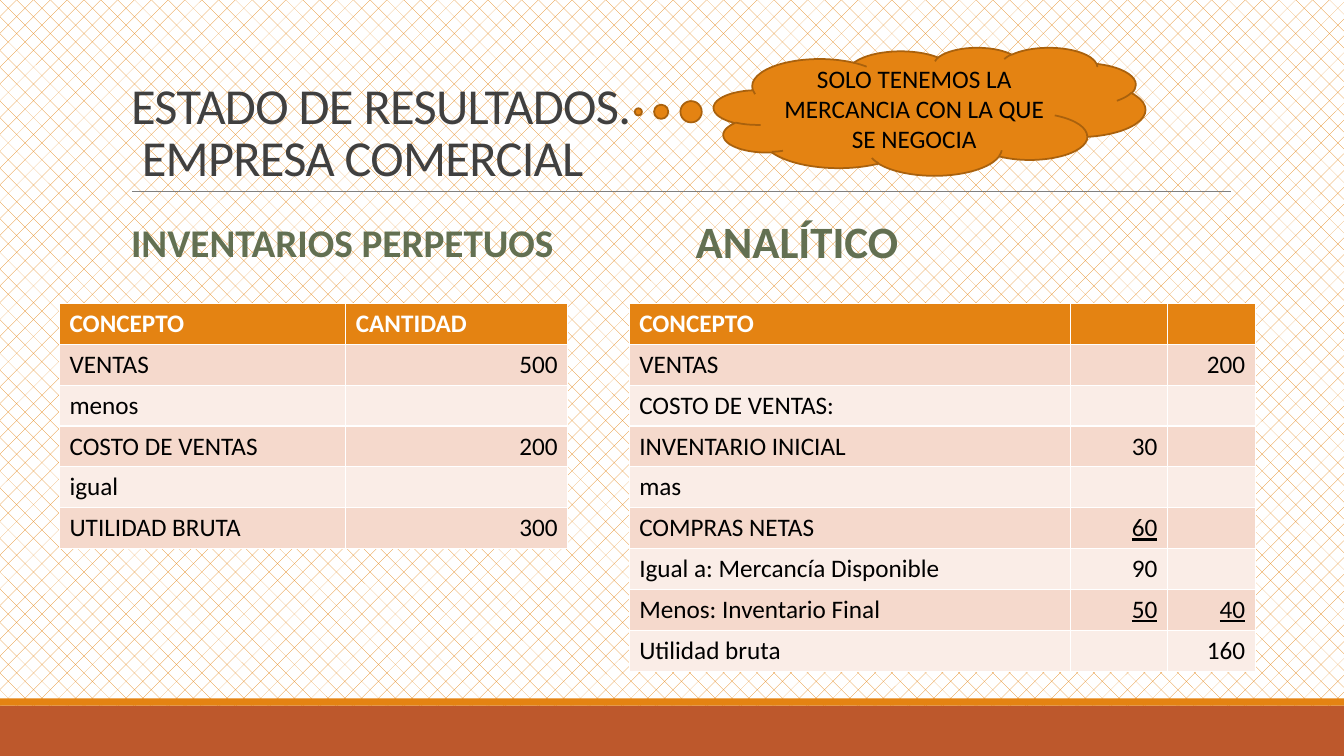
import pptx
import pptx.dml.color
import pptx.enum.dml
import pptx.enum.shapes
import pptx.enum.text
import pptx.oxml
import pptx.oxml.ns
import pptx.util
from pptx.util import Inches

SHAPES = pptx.enum.shapes.MSO_SHAPE
ALIGN = pptx.enum.text.PP_ALIGN
ANCHOR = pptx.enum.text.MSO_ANCHOR

ORANGE, RUST, WHITE, BLACK = "E48312", "BD582C", "FFFFFF", "000000"
BANDS = ("F5D9CC", "FAEDE7")
ROW_HEIGHT = 0.405

PERPETUAL = [
    ("CONCEPTO", "CANTIDAD"),
    ("VENTAS", "500"),
    ("menos", ""),
    ("COSTO DE VENTAS", "200"),
    ("igual", ""),
    ("UTILIDAD BRUTA", "300"),
]
ANALYTIC = [
    ("CONCEPTO", "", ""),
    ("VENTAS", "", "200"),
    ("COSTO DE VENTAS:", "", ""),
    ("INVENTARIO INICIAL", "30", ""),
    ("mas", "", ""),
    ("COMPRAS NETAS", "60", ""),
    ("Igual a: Mercancía Disponible", "90", ""),
    ("Menos: Inventario Final", "50", "40"),
    ("Utilidad bruta", "", "160"),
]


def rgb(value):
    return pptx.dml.color.RGBColor.from_string(value)


def set_all(target, values):
    for name, value in values.items():
        setattr(target, name, value)


def write(frame, text, size, color, bold=False, underline=False, **paragraph_format):
    """Fill the first paragraph of a text frame and format its runs."""
    paragraph = frame.paragraphs[0]
    paragraph.text = text
    set_all(paragraph, paragraph_format)
    for run in paragraph.runs:
        set_all(run.font, {"name": "Calibri", "size": pptx.util.Pt(size),
                           "bold": bold, "underline": underline})
        run.font.color.rgb = rgb(color)
    return paragraph


def add_filled_shape(slide, preset, box, fill, line=None, width=0):
    shape = slide.shapes.add_shape(preset, *map(Inches, box))
    shape.shadow.inherit = False
    shape.fill.solid()
    shape.fill.fore_color.rgb = rgb(fill)
    if line:
        shape.line.color.rgb = rgb(line)
        shape.line.width = pptx.util.Pt(width)
    else:
        shape.line.fill.background()
    return shape


def add_rule(slide, left, right, y):
    rule = slide.shapes.add_connector(
        pptx.enum.shapes.MSO_CONNECTOR.STRAIGHT,
        Inches(left), Inches(y), Inches(right), Inches(y))
    rule.line.color.rgb = rgb("808080")
    rule.line.width = pptx.util.Pt(0.5)
    properties = rule._element.find(pptx.oxml.ns.qn("p:spPr"))
    pptx.oxml.ns.qn("a:effectLst")
    properties.append(pptx.oxml.parse_xml(
        "<a:effectLst %s/>" % pptx.oxml.ns.nsdecls("a")))


def place(placeholder, box, anchor):
    set_all(placeholder, dict(zip(("left", "top", "width", "height"), map(Inches, box))))
    set_all(placeholder.text_frame, {
        "vertical_anchor": anchor, "word_wrap": True,
        "auto_size": pptx.enum.text.MSO_AUTO_SIZE.NONE})
    return placeholder.text_frame


def set_title(slide):
    frame = place(slide.shapes.title, (1.2, 0.31, 11, 1.59), ANCHOR.BOTTOM)
    title = write(frame, "ESTADO DE RESULTADOS.\n EMPRESA COMERCIAL", 36, "404040",
                  alignment=ALIGN.LEFT, line_spacing=0.85)
    for run in title.runs:
        run.font._element.set("spc", "-50")


def set_heading(placeholder, left, text, size):
    frame = place(placeholder, (left, 2.02, 5.4, 0.81), ANCHOR.MIDDLE)
    write(frame, text, size, "637052", bold=True, line_spacing=0.9,
          space_before=pptx.util.Pt(12), space_after=pptx.util.Pt(2))


def add_statement(slide, left, widths, rows, underlined=()):
    """Add a banded table; amounts after the first column align right."""
    table = slide.shapes.add_table(
        len(rows), len(widths), Inches(left), Inches(3.01),
        Inches(sum(widths)), Inches(ROW_HEIGHT * len(rows))).table
    for column, width in zip(table.columns, widths):
        column.width = Inches(width)
    for r, row in enumerate(rows):
        table.rows[r].height = Inches(ROW_HEIGHT)
        header = r == 0
        for c, text in enumerate(row):
            cell = table.cell(r, c)
            cell.fill.solid()
            cell.fill.fore_color.rgb = rgb(ORANGE if header else BANDS[(r - 1) % 2])
            write(cell.text_frame, text, 18, WHITE if header else BLACK,
                  bold=header, underline=text in underlined,
                  alignment=ALIGN.LEFT if header or c == 0 else ALIGN.RIGHT)


def add_cloud(slide):
    cloud = add_filled_shape(slide, SHAPES.CLOUD_CALLOUT, (7.08, 0.47, 4.28, 1.27),
                             ORANGE, "A9610D", 1.25)
    cloud.adjustments[0], cloud.adjustments[1] = -0.675, 0.004
    set_all(cloud.text_frame, {"word_wrap": True, "vertical_anchor": ANCHOR.MIDDLE})
    write(cloud.text_frame, "SOLO TENEMOS LA MERCANCIA CON LA QUE SE NEGOCIA",
          18, BLACK, alignment=ALIGN.CENTER)


def set_background(slide):
    fill = slide.background.fill
    fill.patterned()
    fill.pattern = pptx.enum.dml.MSO_PATTERN.DOTTED_DIAMOND
    fill.fore_color.rgb = rgb(ORANGE)
    fill.back_color.rgb = rgb(WHITE)


def main():
    presentation = pptx.Presentation()
    set_all(presentation, {"slide_width": Inches(13.33), "slide_height": Inches(7.5)})
    slide = presentation.slides.add_slide(presentation.slide_layouts[4])
    set_background(slide)

    _, left_heading, left_content, right_heading, right_content = slide.placeholders
    for unused in (left_content, right_content):
        unused._element.getparent().remove(unused._element)

    add_filled_shape(slide, SHAPES.RECTANGLE, (0, 7, 13.33, 0.5), RUST)
    add_filled_shape(slide, SHAPES.RECTANGLE, (0, 6.93, 13.33, 0.07), ORANGE)
    add_rule(slide, 1.31, 12.21, 1.9)
    set_title(slide)
    set_heading(left_heading, 1.2, "INVENTARIOS PERPETUOS", 28)
    set_heading(right_heading, 6.8, "ANALÍTICO", 32)
    add_statement(slide, 0.59, (2.84, 2.2), PERPETUAL)
    add_statement(slide, 6.24, (4.38, 0.96, 0.87), ANALYTIC, underlined=("60", "50", "40"))
    add_cloud(slide)
    presentation.save("out.pptx")


if __name__ == "__main__":
    main()
